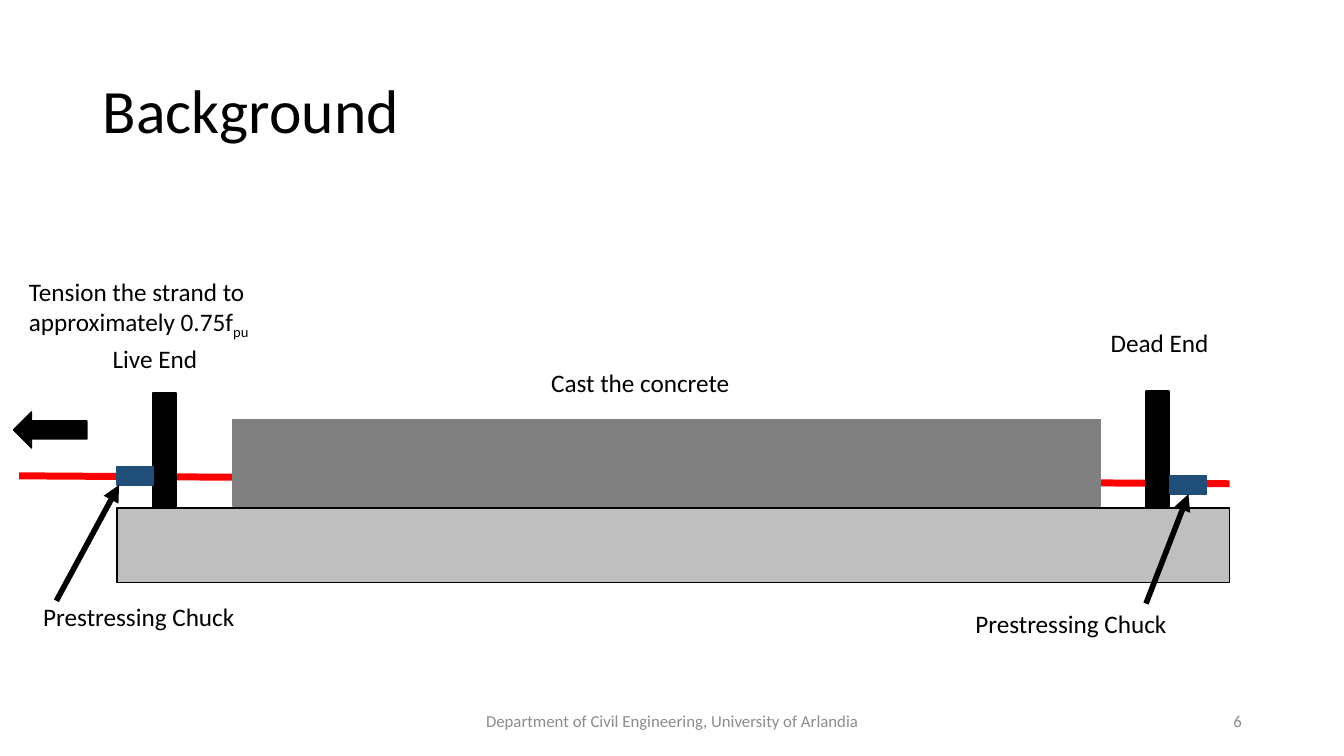
import pptx
import pptx.util
import pptx.dml.color
import pptx.enum.shapes
import pptx.enum.text
import pptx.oxml.ns
import lxml.etree
from dataclasses import dataclass

Cm = pptx.util.Cm
Pt = pptx.util.Pt
Shape = pptx.enum.shapes.MSO_SHAPE
Align = pptx.enum.text.PP_ALIGN
Anchor = pptx.enum.text.MSO_ANCHOR
Fit = pptx.enum.text.MSO_AUTO_SIZE


@dataclass(frozen=True)
class Theme:
    font: str = "Calibri"
    black: str = "000000"
    muted: str = "8C8C8C"
    strand: str = "FF0000"
    bed: str = "BFBFBF"
    beam: str = "808080"
    chuck: str = "1F4E79"
    title: int = 44
    body: int = 18
    small: int = 12


THEME = Theme()


def rgb(code):
    return pptx.dml.color.RGBColor.from_string(code)


def write(para, text, size, color=THEME.black, sub=False):
    run = para.add_run()
    run.text = text
    run.font.name = THEME.font
    run.font.size = Pt(size)
    run.font.color.rgb = rgb(color)
    if sub:
        run._r.get_or_add_rPr().set("baseline", "-25000")


def label(slide, x, y, w, text, sub="", h=1.02):
    frame = slide.shapes.add_textbox(Cm(x), Cm(y), Cm(w), Cm(h)).text_frame
    frame.word_wrap = True
    frame.auto_size = Fit.SHAPE_TO_FIT_TEXT
    para = frame.paragraphs[0]
    write(para, text, THEME.body)
    if sub:
        write(para, sub, THEME.body, sub=True)


def block(slide, x, y, w, h, fill, edge=None, width=1, kind=Shape.RECTANGLE):
    shape = slide.shapes.add_shape(kind, Cm(x), Cm(y), Cm(w), Cm(h))
    shape.shadow.inherit = False
    shape.fill.solid()
    shape.fill.fore_color.rgb = rgb(fill)
    shape.line.color.rgb = rgb(edge or fill)
    shape.line.width = Pt(width)
    return shape


def line(slide, start, end, color, width, arrow=False):
    link = slide.shapes.add_connector(
        pptx.enum.shapes.MSO_CONNECTOR.STRAIGHT, *map(Cm, start + end))
    link.line.color.rgb = rgb(color)
    link.line.width = Pt(width)
    qn = pptx.oxml.ns.qn
    if arrow:
        stroke = link.line._get_or_add_ln()
        lxml.etree.SubElement(stroke, qn("a:tailEnd"), type="triangle")
    lxml.etree.SubElement(link._element.spPr, qn("a:effectLst"))


def heading(slide, x, y, w, h):
    title = slide.shapes.title
    title.left, title.top, title.width, title.height = map(Cm, (x, y, w, h))
    frame = title.text_frame
    frame.auto_size = Fit.NONE
    frame.vertical_anchor = Anchor.MIDDLE
    para = frame.paragraphs[0]
    para.alignment = Align.LEFT
    para.line_spacing = 0.9
    write(para, "Background", THEME.title)


def footer(slide, x, y, w, h):
    parts = (
        (x, 11.43, Align.CENTER,
         "Department of Civil Engineering, University of Arlandia"),
        (x + w - 7.62, 7.62, Align.RIGHT, "6"),
    )
    for left, width, align, text in parts:
        frame = slide.shapes.add_textbox(
            Cm(left), Cm(y), Cm(width), Cm(h)).text_frame
        frame.word_wrap = True
        frame.vertical_anchor = Anchor.MIDDLE
        para = frame.paragraphs[0]
        para.alignment = align
        write(para, text, THEME.small, THEME.muted)


def anchor(slide, x, y, post, edge, name, note, tail, tip):
    """Draw one bed end; x, y is its chuck and the pairs are offsets from it."""
    def at(pair):
        return x + pair[0], y + pair[1]

    block(slide, *at(post), 0.58, 2.9, THEME.black, width=edge)
    block(slide, x, y, 0.91, 0.46, THEME.chuck)
    text, width, *place = name
    label(slide, *at(place), width, text)
    label(slide, *at(note), 6.05, "Prestressing Chuck")
    line(slide, at(tail), at(tip), THEME.black, 4, arrow=True)


def diagram(slide, x, y, w, h):
    """Draw the casting bed in the given box, with all parts around it."""
    line(slide, (x - 2.47, y - 0.81), (x + w, y - 0.61), THEME.strand, 5)
    block(slide, x, y, w, h, THEME.bed, THEME.black)
    block(slide, x + 2.92, y - 2.23, 21.87, 2.18, THEME.beam)
    anchor(slide, x, y - 1.04, (0.91, -1.86), 1,
           ("Live End", 2.69, -0.36, -3.23),
           (-2.11, 3.28), (-1.53, 3.38), (0.05, 0.46))
    anchor(slide, x + w - 1.5, y - 0.81, (-0.61, -2.13), 2,
           ("Dead End", 3.1, -1.75, -3.86),
           (-5.16, 3.22), (-0.61, 3.22), (0.46, 0.46))
    pull = block(slide, x - 2.14, y - 2.89, 0.91, 1.85, THEME.black,
                 kind=Shape.DOWN_ARROW)
    pull.rotation = 90
    label(slide, x - 2.47, y - 5.97, 7.37,
          "Tension the strand to approximately 0.75f", "pu", 1.8)
    label(slide, x + 10.69, y - 3.68, 5.26, "Cast the concrete")


def main():
    deck = pptx.Presentation()
    deck.slide_width, deck.slide_height = Cm(33.87), Cm(19.05)
    slide = deck.slides.add_slide(deck.slide_layouts[5])
    heading(slide, 2.34, 1.02, 29.21, 3.68)
    diagram(slide, 2.95, 12.8, 28.04, 1.88)
    footer(slide, 11.23, 17.65, 20.32, 1.02)
    deck.save("out.pptx")


if __name__ == "__main__":
    main()
